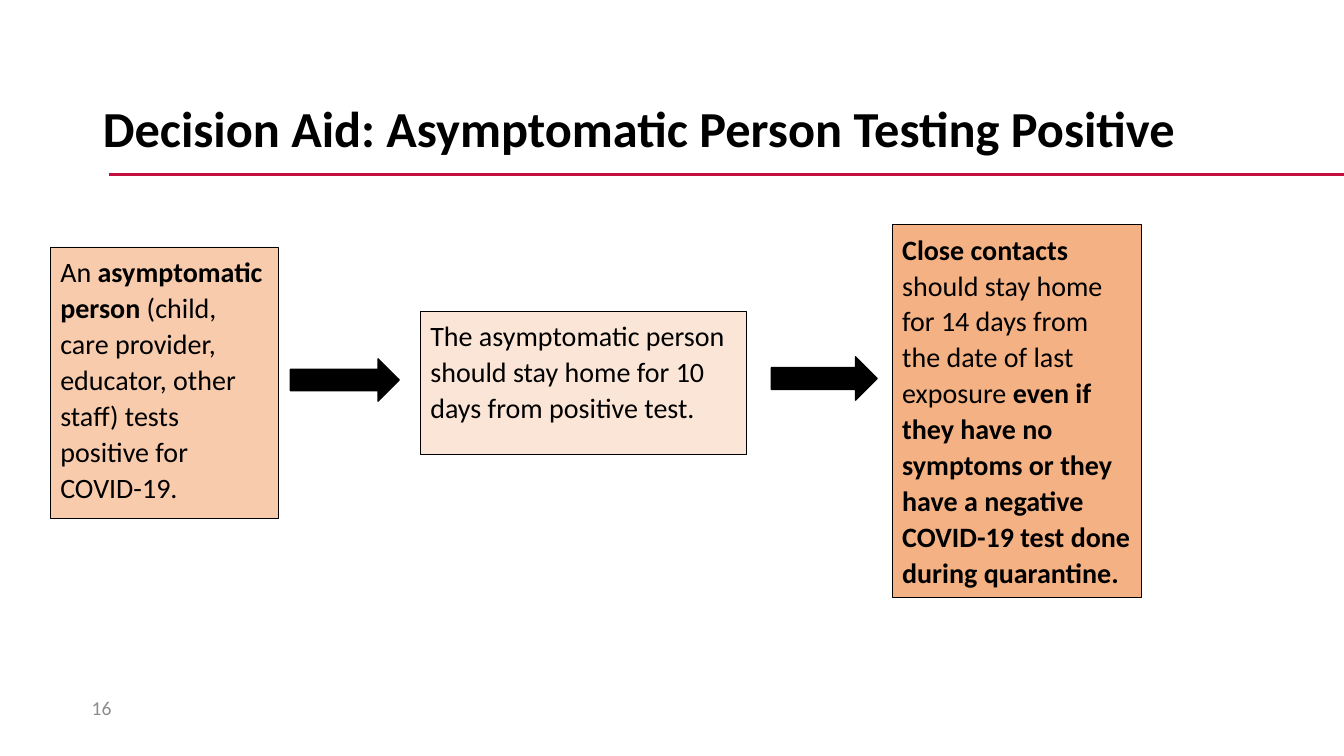
from dataclasses import dataclass

from lxml.etree import SubElement
from pptx import Presentation
from pptx.dml.color import RGBColor
from pptx.enum.shapes import MSO_CONNECTOR, MSO_SHAPE
from pptx.enum.text import MSO_ANCHOR, MSO_AUTO_SIZE, PP_ALIGN
from pptx.oxml.ns import qn
from pptx.util import Inches, Pt


@dataclass(frozen=True)
class Theme:
    font: str = "Calibri"
    ink: str = "000000"
    rule: str = "C40E3E"
    muted: str = "8C8C8C"
    person: str = "F8CBAD"
    isolation: str = "FBE5D6"
    contacts: str = "F4B183"
    title_size: int = 36
    body_size: int = 20
    number_size: int = 14


THEME = Theme()


def rgb(value):
    return RGBColor.from_string(value)


def place(part, left, top, width, height):
    part.left, part.top = Inches(left), Inches(top)
    part.width, part.height = Inches(width), Inches(height)


def add_run(paragraph, wording, size, color=THEME.ink, bold=False):
    run = paragraph.add_run()
    run.text = wording
    run.font.name = THEME.font
    run.font.size = Pt(size)
    run.font.bold = bold
    run.font.color.rgb = rgb(color)


def set_title(slide, wording):
    title = slide.shapes.title
    place(title, 0.92, 0.76, 11.5, 1.09)
    frame = title.text_frame
    frame.word_wrap = True
    frame.auto_size = MSO_AUTO_SIZE.NONE
    frame.vertical_anchor = MSO_ANCHOR.MIDDLE
    heading = frame.paragraphs[0]
    heading.alignment = PP_ALIGN.LEFT
    heading.line_spacing = 0.9
    add_run(heading, wording, THEME.title_size, bold=True)


def add_rule(slide, left, right, height):
    rule = slide.shapes.add_connector(
        MSO_CONNECTOR.STRAIGHT,
        Inches(left), Inches(height), Inches(right), Inches(height),
    )
    rule.line.color.rgb = rgb(THEME.rule)
    rule.line.width = Pt(2.25)
    SubElement(rule.element.spPr, qn("a:effectLst"))


def add_page_number(slide, number):
    page = slide.shapes.add_textbox(
        Inches(0.81), Inches(6.82), Inches(0.49), Inches(0.4)
    )
    page.text_frame.word_wrap = True
    page.text_frame.vertical_anchor = MSO_ANCHOR.MIDDLE
    add_run(page.text_frame.paragraphs[0], number, THEME.number_size, THEME.muted)


def add_outlined(slide, preset, bounds, fill, line_width):
    outlined = slide.shapes.add_shape(preset, *map(Inches, bounds))
    outlined.shadow.inherit = False
    outlined.fill.solid()
    outlined.fill.fore_color.rgb = rgb(fill)
    outlined.line.color.rgb = rgb(THEME.ink)
    outlined.line.width = Pt(line_width)
    return outlined


def add_step(slide, bounds, fill, phrases):
    step = add_outlined(slide, MSO_SHAPE.RECTANGLE, bounds, fill, 0.5)
    frame = step.text_frame
    frame.word_wrap = True
    frame.vertical_anchor = MSO_ANCHOR.TOP
    advice = frame.paragraphs[0]
    advice.alignment = PP_ALIGN.LEFT
    advice.line_spacing = 1.07
    advice.space_after = Pt(8)
    for wording, bold in phrases:
        add_run(advice, wording, THEME.body_size, bold=bold)


def add_arrow(slide, bounds):
    add_outlined(slide, MSO_SHAPE.RIGHT_ARROW, bounds, THEME.ink, 1)


def main():
    deck = Presentation()
    deck.slide_width, deck.slide_height = Inches(13.33), Inches(7.5)
    slide = deck.slides.add_slide(deck.slide_layouts.get_by_name("Title Only"))

    add_rule(slide, 1.08, 13.33, 1.73)
    set_title(slide, "Decision Aid: Asymptomatic Person Testing Positive")
    add_page_number(slide, "16")

    add_step(slide, (0.5, 2.45, 2.26, 2.69), THEME.person, [
        ("An ", False),
        ("asymptomatic person", True),
        (" (child, care provider, educator, other staff) tests positive "
         "for COVID-19.", False),
    ])
    add_step(slide, (4.17, 3.09, 3.23, 1.42), THEME.isolation, [
        ("The asymptomatic person should stay home for 10 days from "
         "positive test.", False),
    ])
    add_arrow(slide, (2.88, 3.56, 1.08, 0.42))
    add_arrow(slide, (7.65, 3.54, 1.05, 0.43))
    add_step(slide, (8.85, 2.23, 2.47, 3.7), THEME.contacts, [
        ("Close contacts ", True),
        ("should stay home for 14 days from the date of last exposure ", False),
        ("even if they have no symptoms or they have a negative COVID-19 "
         "test done during quarantine.", True),
    ])

    deck.save("out.pptx")


if __name__ == "__main__":
    main()
